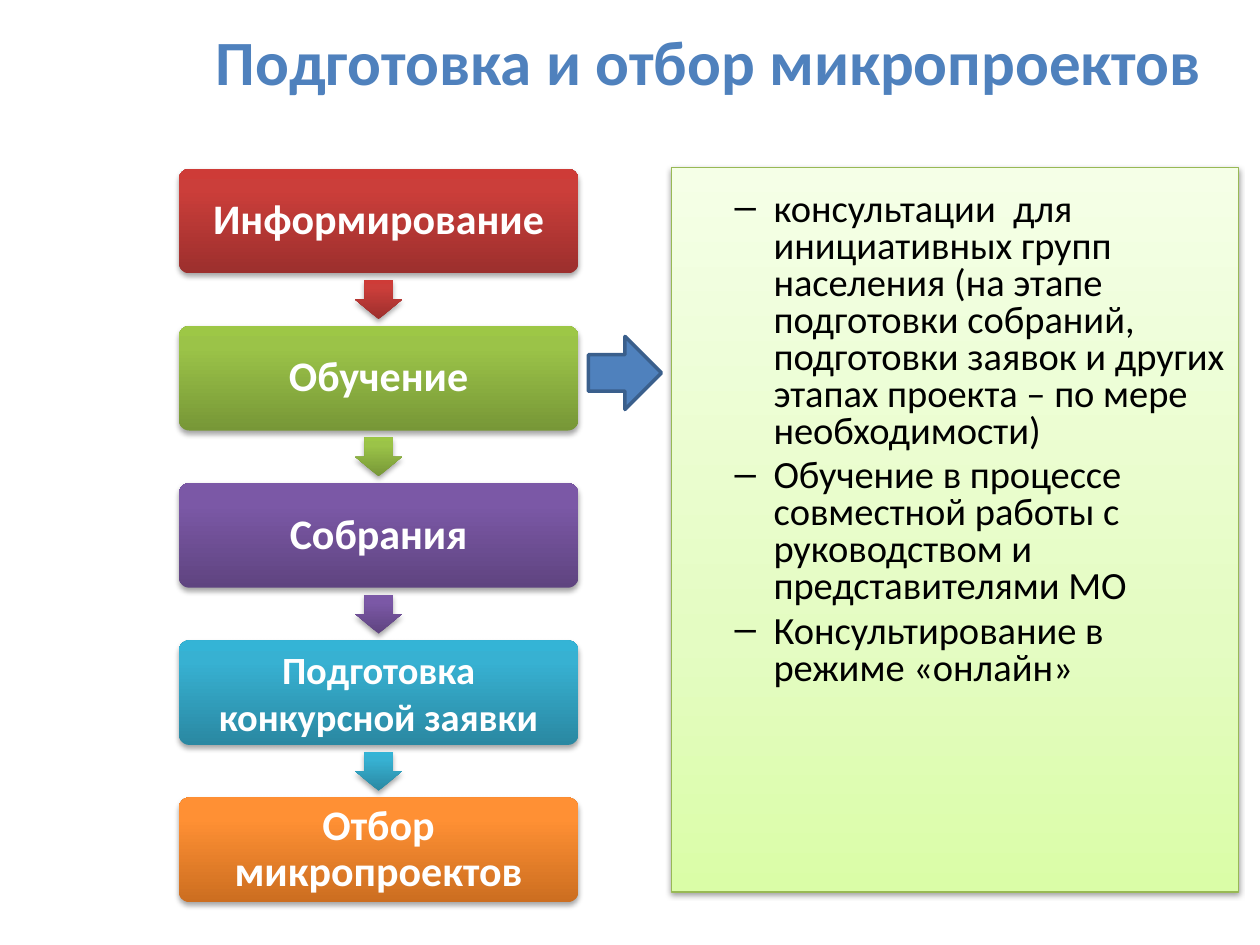
from copy import deepcopy

from lxml import etree
from pptx import Presentation
from pptx.dml.color import RGBColor
from pptx.enum.shapes import MSO_SHAPE
from pptx.enum.text import MSO_ANCHOR, PP_ALIGN
from pptx.oxml.ns import qn
from pptx.util import Inches, Pt

ROUNDED, RECTANGLE = MSO_SHAPE.ROUNDED_RECTANGLE, MSO_SHAPE.RECTANGLE
DOWN_ARROW, RIGHT_ARROW = MSO_SHAPE.DOWN_ARROW, MSO_SHAPE.RIGHT_ARROW
MIDDLE, TOP = MSO_ANCHOR.MIDDLE, MSO_ANCHOR.TOP
CENTER, LEFT = PP_ALIGN.CENTER, PP_ALIGN.LEFT

FONT = "Calibri"
BLUE = RGBColor(0x4F, 0x81, 0xBD)
DARK_BLUE = RGBColor(0x3A, 0x5F, 0x8C)
WHITE = RGBColor(0xFF, 0xFF, 0xFF)
BLACK = RGBColor(0x00, 0x00, 0x00)
GREEN_LINE = RGBColor(0x98, 0xB9, 0x55)
RED_RAMP = (RGBColor(0x9C, 0x2F, 0x2D), RGBColor(0xCB, 0x3E, 0x3A), RGBColor(0xCE, 0x3B, 0x37))
GREEN_RAMP = (RGBColor(0x77, 0x97, 0x37), RGBColor(0x9B, 0xC3, 0x48), RGBColor(0x9D, 0xC7, 0x46))
PURPLE_RAMP = (RGBColor(0x5F, 0x44, 0x80), RGBColor(0x7B, 0x58, 0xA6), RGBColor(0x7C, 0x57, 0xA8))
TEAL_RAMP = (RGBColor(0x2A, 0x88, 0xA2), RGBColor(0x37, 0xB1, 0xD2), RGBColor(0x34, 0xB4, 0xD6))
ORANGE_RAMP = (RGBColor(0xCC, 0x6E, 0x20), RGBColor(0xFF, 0x90, 0x34), RGBColor(0xFF, 0x91, 0x36))
PALE_RAMP = (RGBColor(0xDA, 0xFD, 0xA7), RGBColor(0xE4, 0xFC, 0xC2), RGBColor(0xF5, 0xFF, 0xE7))

STEPS = [
    ("Информирование", RED_RAMP, 24, 0.9),
    ("Обучение", GREEN_RAMP, 24, 0.9),
    ("Собрания", PURPLE_RAMP, 24, 0.9),
    ("Подготовка конкурсной заявки", TEAL_RAMP, 22, 1.0),
    ("Отбор микропроектов", ORANGE_RAMP, 24, 0.9),
]
DETAILS = [
    "консультации  для инициативных групп населения (на этапе подготовки собраний, "
    "подготовки заявок и других этапах проекта – по мере необходимости)",
    "Обучение в процессе совместной работы с руководством и представителями МО",
    "Консультирование в режиме «онлайн»",
]


def set_font(para, size, color, bold=False):
    """Format all the text of a paragraph."""
    para.font.name, para.font.size = FONT, Pt(size)
    para.font.bold, para.font.color.rgb = bold, color


def set_margins(frame, left, top, right, bottom):
    """Set the four insets of a text frame in inches."""
    frame.margin_left, frame.margin_top = Inches(left), Inches(top)
    frame.margin_right, frame.margin_bottom = Inches(right), Inches(bottom)


def add_block(page, kind, left, top, width, height):
    """Add a preset shape without line or shadow."""
    block = page.shapes.add_shape(kind, Inches(left), Inches(top), Inches(width), Inches(height))
    block.shadow.inherit = False
    block.line.fill.background()
    return block


def shade(block, ramp, middle, alpha, distance):
    """Give a block a three-stop upward gradient and a soft shadow below it."""
    block.fill.gradient()
    block.fill.gradient_angle = 90
    properties = block._element.spPr
    stops = properties.find(qn("a:gradFill")).find(qn("a:gsLst"))
    stops.append(deepcopy(stops[-1]))
    for stop, color, position in zip(block.fill.gradient_stops, ramp, (0, middle, 1)):
        stop.color.rgb, stop.position = color, position
    effects = properties.find(qn("a:effectLst"))
    shadow = etree.SubElement(effects, qn("a:outerShdw"), blurRad=str(Pt(3.1)),
                              dist=str(Pt(distance)), dir="5400000", rotWithShape="0")
    color = etree.SubElement(shadow, qn("a:srgbClr"), val=str(BLACK))
    etree.SubElement(color, qn("a:alpha"), val=str(alpha * 1000))


def add_title(page, left, top, width, height):
    """Place and format the slide title."""
    title = page.shapes.title
    title.left, title.top = Inches(left), Inches(top)
    title.width, title.height = Inches(width), Inches(height)
    title.text_frame.text = "Подготовка и отбор микропроектов"
    title.text_frame.vertical_anchor = MIDDLE
    para = title.text_frame.paragraphs[0]
    para.alignment = CENTER
    set_font(para, 36, BLUE, bold=True)


def add_steps(page, left, top, width, height):
    """Stack the step boxes in the given area with arrows in the gaps."""
    box_height, arrow_width, arrow_height = 0.83, 0.37, 0.31
    pitch = (height - box_height) / (len(STEPS) - 1)
    arrow_left = left + (width - arrow_width) / 2
    arrow_drop = (box_height + pitch - arrow_height) / 2
    for index, (label, ramp, size, spacing) in enumerate(STEPS):
        box_top = top + index * pitch
        box = add_block(page, ROUNDED, left, box_top, width, box_height)
        box.adjustments[0] = 0.1
        shade(box, ramp, 0.8, 35, 1.8)
        frame = box.text_frame
        frame.text, frame.word_wrap, frame.vertical_anchor = label, True, MIDDLE
        set_margins(frame, 0.12, 0.12, 0.12, 0.12)
        para = frame.paragraphs[0]
        para.alignment, para.line_spacing = CENTER, spacing
        set_font(para, size, WHITE, bold=True)
        if index < len(STEPS) - 1:
            arrow = add_block(page, DOWN_ARROW, arrow_left, box_top + arrow_drop,
                              arrow_width, arrow_height)
            arrow.adjustments[0], arrow.adjustments[1] = 0.6, 0.5
            shade(arrow, ramp, 0.8, 35, 1.8)


def add_details(page, left, top, width, height):
    """Add the panel that lists the details of the training step."""
    panel = add_block(page, RECTANGLE, left, top, width, height)
    shade(panel, PALE_RAMP, 0.35, 38, 1.6)
    panel.line.color.rgb, panel.line.width = GREEN_LINE, Pt(0.75)
    frame = panel.text_frame
    frame.word_wrap, frame.vertical_anchor = True, TOP
    set_margins(frame, 0, 0.2, 0.1, 0.05)
    for index, text in enumerate(DETAILS):
        para = frame.add_paragraph() if index else frame.paragraphs[0]
        para.text, para.level = text, 1
        para.alignment, para.line_spacing = LEFT, 0.8
        if index:
            para.space_before = Pt(4.4)
        properties = para._p.get_or_add_pPr()
        properties.set("marL", str(Inches(0.81)))
        properties.set("indent", str(Inches(-0.31)))
        etree.SubElement(properties, qn("a:buFont"), typeface="Arial")
        etree.SubElement(properties, qn("a:buChar"), char="–")
        set_font(para, 22, BLACK)


def add_pointer(page, left, top, width, height):
    """Add the arrow from the training step to its details."""
    pointer = add_block(page, RIGHT_ARROW, left, top, width, height)
    pointer.fill.solid()
    pointer.fill.fore_color.rgb = BLUE
    pointer.line.color.rgb, pointer.line.width = DARK_BLUE, Pt(2)


def main():
    """Build the slide and save the deck."""
    deck = Presentation()
    deck.slide_width, deck.slide_height = Inches(10), Inches(7.5)
    page = deck.slides.add_slide(deck.slide_layouts[5])
    add_title(page, 1.25, 0, 8.75, 0.95)
    add_steps(page, 1.42, 1.34, 3.17, 5.82)
    add_details(page, 5.33, 1.33, 4.5, 5.75)
    add_pointer(page, 4.67, 2.67, 0.58, 0.58)
    deck.save("out.pptx")


if __name__ == "__main__":
    main()
